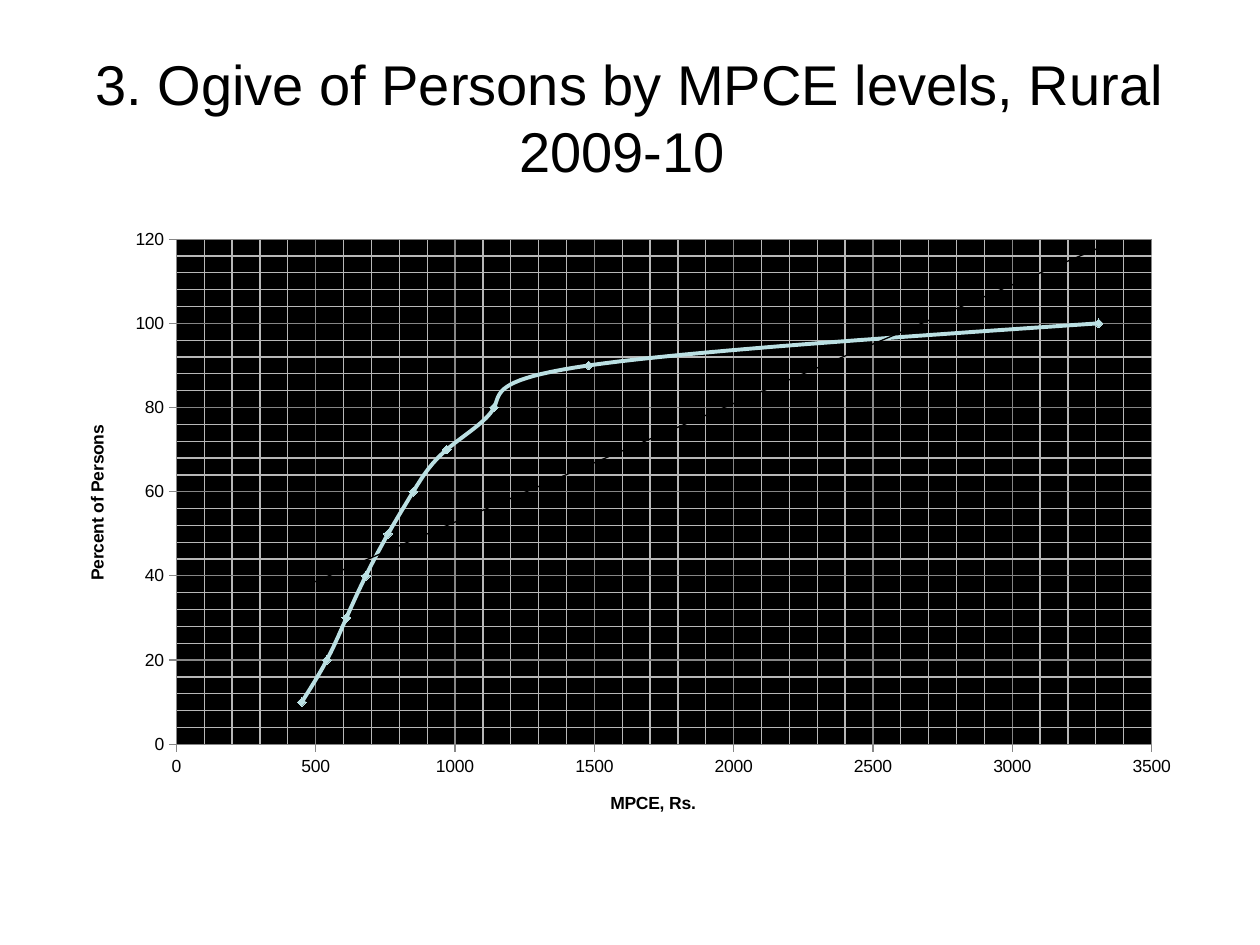
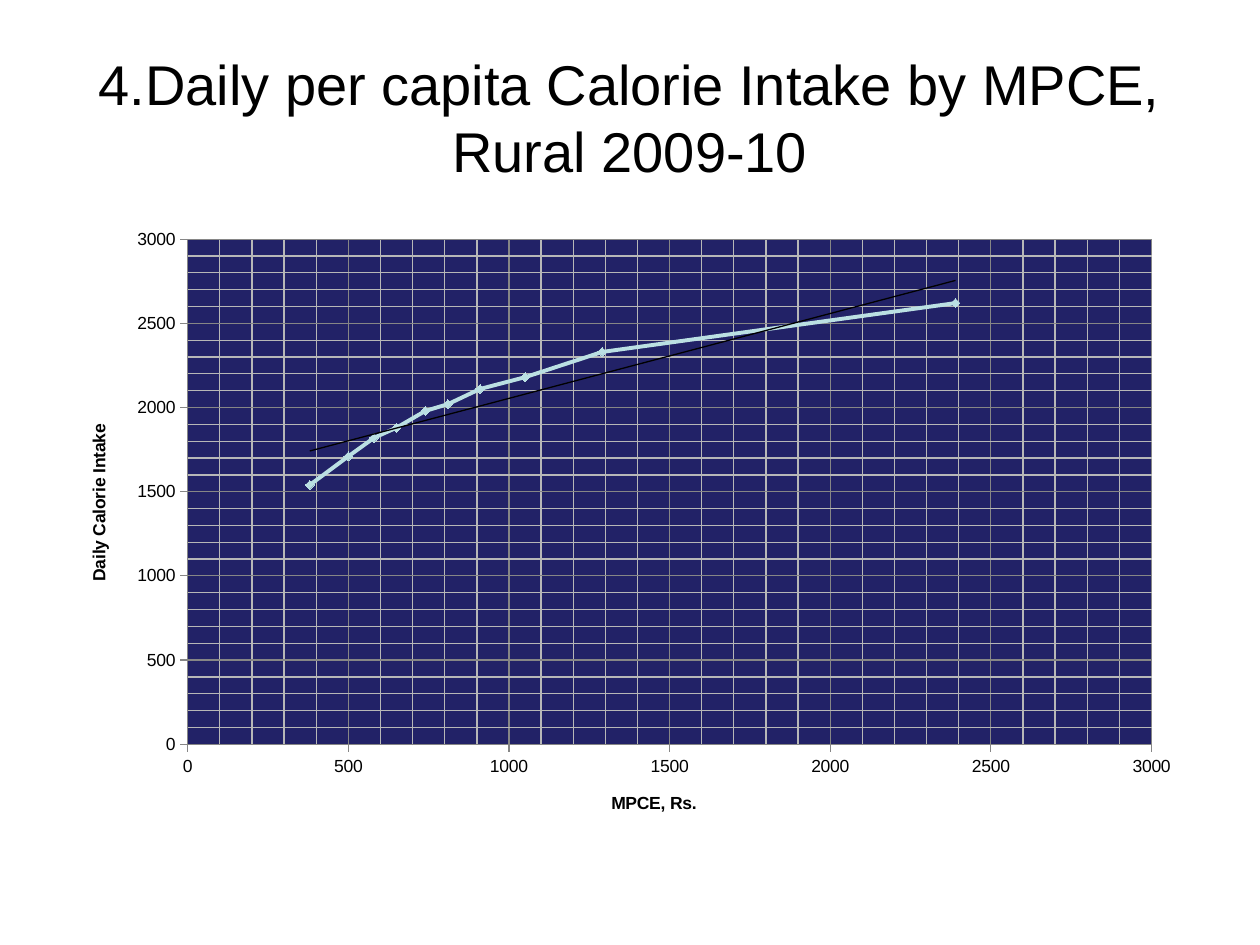
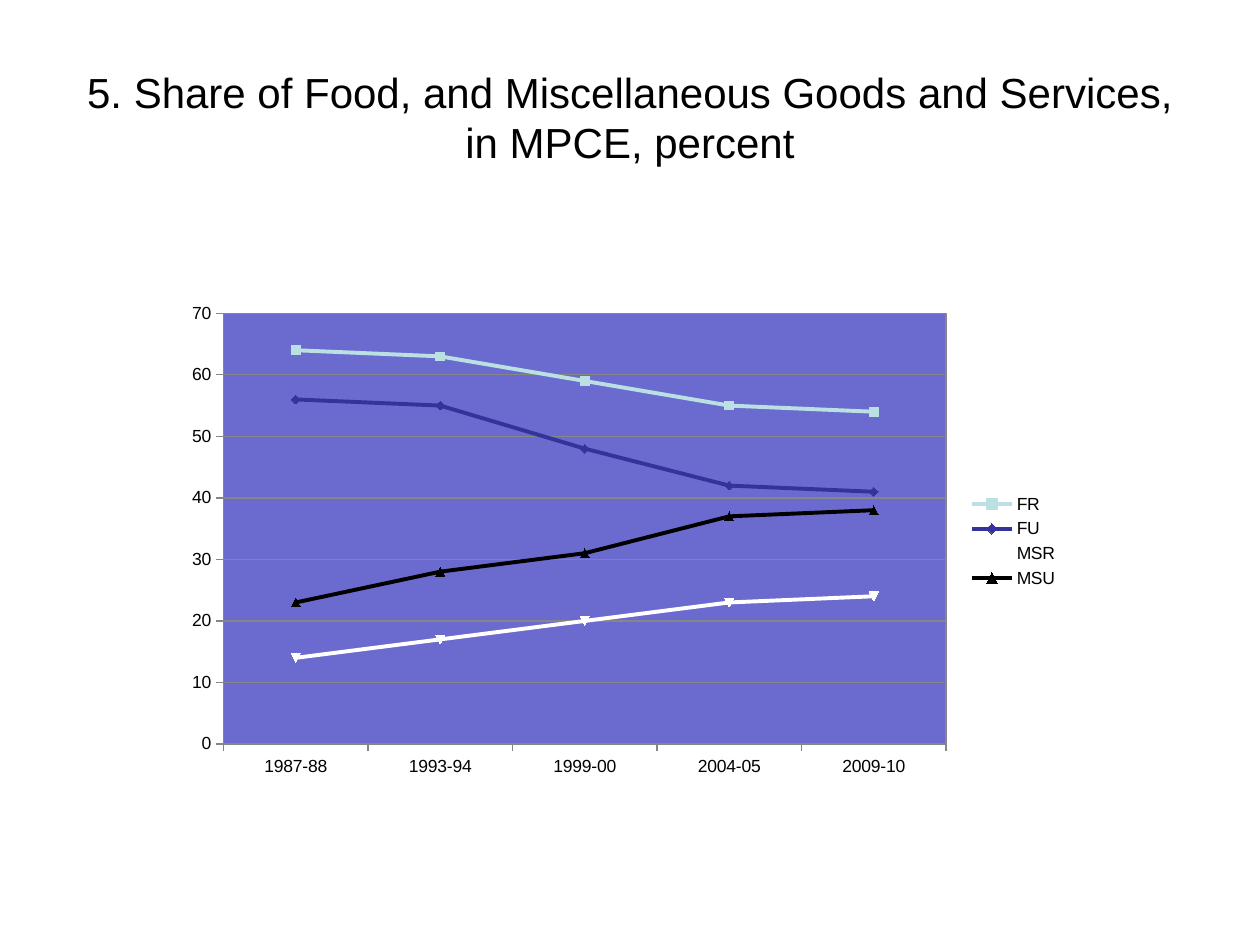
from lxml.etree import SubElement
from pptx import Presentation
from pptx.chart.data import CategoryChartData, XyChartData
from pptx.dml.color import RGBColor
from pptx.enum.chart import XL_CHART_TYPE, XL_LEGEND_POSITION, XL_MARKER_STYLE, XL_TICK_MARK
from pptx.enum.text import MSO_ANCHOR, PP_ALIGN
from pptx.oxml import parse_xml
from pptx.oxml.ns import nsdecls, qn
from pptx.util import Inches, Pt

FONT = "Arial"
BLACK = RGBColor(0x00, 0x00, 0x00)
WHITE = RGBColor(0xFF, 0xFF, 0xFF)
NAVY = RGBColor(0x22, 0x22, 0x67)
VIOLET = RGBColor(0x6B, 0x6B, 0xCF)
PALE_BLUE = RGBColor(0xBB, 0xE0, 0xE3)
INDIGO = RGBColor(0x33, 0x33, 0x99)
AXIS_GRAY = RGBColor(0x86, 0x86, 0x86)
MINOR_GRAY = RGBColor(0xB7, 0xB7, 0xB7)
THIN_LINE = '<a:ln w="9525"><a:solidFill><a:srgbClr val="{}"/></a:solidFill></a:ln>'

prs = Presentation()
prs.slide_width, prs.slide_height = Inches(10), Inches(7.5)


def add_titled_slide(title, size):
    slide = prs.slides.add_slide(prs.slide_layouts[6])
    slide.background.fill.solid()
    slide.background.fill.fore_color.rgb = WHITE
    heading = slide.shapes.add_textbox(Inches(0.5), Inches(0.3), Inches(9), Inches(1.25))
    frame = heading.text_frame
    frame.text = title
    frame.word_wrap = True
    frame.vertical_anchor = MSO_ANCHOR.MIDDLE
    paragraph = frame.paragraphs[0]
    paragraph.alignment = PP_ALIGN.CENTER
    font = paragraph.runs[0].font
    font.name, font.size, font.color.rgb = FONT, Pt(size), BLACK
    return slide


def style_chart(chart, plot_fill, plot_box, series_colors):
    """Set the common look; plot_box is x, y, w, h as shares of the chart."""
    chart.has_title = False
    chart.has_legend = False
    chart.font.name, chart.font.size, chart.font.color.rgb = FONT, Pt(10), BLACK
    chart.plots[0].vary_by_categories = False
    for axis in (chart.category_axis, chart.value_axis):
        axis.major_tick_mark = XL_TICK_MARK.OUTSIDE
        axis.minor_tick_mark = XL_TICK_MARK.NONE
        axis.format.line.color.rgb = AXIS_GRAY
    chart.value_axis.has_major_gridlines = True
    chart.value_axis.major_gridlines.format.line.color.rgb = AXIS_GRAY

    for series, color in zip(chart.plots[0].series, series_colors):
        series.format.line.color.rgb = color
        series.format.line.width = Pt(2.25)
        series.marker.format.fill.solid()
        series.marker.format.fill.fore_color.rgb = color
        series.marker.format.line.color.rgb = color

    # Plot area: fixed inner box, fill and border
    plot_area = chart.element.find(".//" + qn("c:plotArea"))
    for old_layout in plot_area.findall(qn("c:layout")):
        plot_area.remove(old_layout)
    layout = parse_xml(f"<c:layout {nsdecls('c')}><c:manualLayout/></c:layout>")
    settings = [("layoutTarget", "inner"), ("xMode", "edge"), ("yMode", "edge")]
    for tag, value in settings + list(zip("xywh", plot_box)):
        SubElement(layout[0], qn(f"c:{tag}")).set("val", str(value))
    plot_area.insert(0, layout)
    plot_area.append(parse_xml(
        f'<c:spPr {nsdecls("c", "a")}>'
        f'<a:solidFill><a:srgbClr val="{plot_fill}"/></a:solidFill>'
        f'{THIN_LINE.format(AXIS_GRAY)}</c:spPr>'))


# Slides 1 and 2: scatter curves over spending levels, with a linear trend
curves = [
    dict(title="3. Ogive of Persons by MPCE levels, Rural 2009-10 ",
         kind=XL_CHART_TYPE.XY_SCATTER_SMOOTH, smooth=True,
         y_title="Percent of Persons", fill=BLACK, box=(0.1, 0.03, 0.86, 0.81),
         x_max=3500, y_max=120, y_major=20,
         spending=[450, 540, 610, 680, 760, 850, 970, 1140, 1480, 3310],
         values=range(10, 101, 10)),
    dict(title="4.Daily per capita Calorie Intake by MPCE, Rural 2009-10",
         kind=XL_CHART_TYPE.XY_SCATTER_LINES, smooth=False,
         y_title="Daily Calorie Intake", fill=NAVY, box=(0.11, 0.03, 0.85, 0.81),
         x_max=3000, y_max=3000, y_major=500,
         spending=[380, 500, 580, 650, 740, 810, 910, 1050, 1290, 2390],
         values=[1540, 1710, 1820, 1880, 1980, 2020, 2110, 2180, 2330, 2620]),
]
for curve in curves:
    slide = add_titled_slide(curve["title"], 32)
    points = XyChartData()
    point_series = points.add_series("Series 1")
    for spending, value in zip(curve["spending"], curve["values"]):
        point_series.add_data_point(spending, value)
    chart = slide.shapes.add_chart(curve["kind"], Inches(0.5), Inches(1.75),
                                   Inches(9), Inches(4.95), points).chart
    style_chart(chart, curve["fill"], curve["box"], [PALE_BLUE])

    # Axes with major and minor grids
    axes = [(chart.category_axis, "MPCE, Rs.", curve["x_max"], 500),
            (chart.value_axis, curve["y_title"], curve["y_max"], curve["y_major"])]
    for axis, axis_title, maximum, major in axes:
        axis.minimum_scale, axis.maximum_scale = 0, maximum
        axis.major_unit, axis.minor_unit = major, major // 5
        axis.has_major_gridlines = axis.has_minor_gridlines = True
        axis.major_gridlines.format.line.color.rgb = AXIS_GRAY
        axis.axis_title.text_frame.text = axis_title
        font = axis.axis_title.text_frame.paragraphs[0].runs[0].font
        font.name, font.size, font.bold, font.color.rgb = FONT, Pt(10), True, BLACK
    for minor_grid in chart.element.findall(".//" + qn("c:minorGridlines")):
        minor_grid.append(parse_xml(
            f'<c:spPr {nsdecls("c", "a")}>{THIN_LINE.format(MINOR_GRAY)}</c:spPr>'))

    # Curve and trend line
    series = chart.plots[0].series[0]
    series.marker.style, series.marker.size = XL_MARKER_STYLE.DIAMOND, 5
    series_xml = chart.element.find(".//" + qn("c:ser"))
    series_xml.find(qn("c:smooth")).set("val", str(int(curve["smooth"])))
    series_xml.find(qn("c:xVal")).addprevious(parse_xml(
        f'<c:trendline {nsdecls("c", "a")}><c:spPr>{THIN_LINE.format(BLACK)}</c:spPr>'
        '<c:trendlineType val="linear"/><c:dispRSqr val="0"/><c:dispEq val="0"/></c:trendline>'))

# Slide 3: shares of food and of miscellaneous goods, rural and urban
slide = add_titled_slide("5. Share of Food, and Miscellaneous Goods and Services, in MPCE, percent", 24)
shares = [
    ("FR", [64, 63, 59, 55, 54], PALE_BLUE),
    ("FU", [56, 55, 48, 42, 41], INDIGO),
    ("MSR", [14, 17, 20, 23, 24], WHITE),
    ("MSU", [23, 28, 31, 37, 38], BLACK),
]
share_data = CategoryChartData()
share_data.categories = ["1987-88", "1993-94", "1999-00", "2004-05", "2009-10"]
for name, values, color in shares:
    share_data.add_series(name, values)
chart = slide.shapes.add_chart(XL_CHART_TYPE.LINE_MARKERS, Inches(1.42), Inches(2.33),
                               Inches(7.08), Inches(3.93), share_data).chart
style_chart(chart, VIOLET, (0.05, 0.04, 0.81, 0.87), [color for name, values, color in shares])
for series in chart.plots[0].series:
    series.smooth = False
chart.value_axis.minimum_scale, chart.value_axis.maximum_scale = 0, 70
chart.value_axis.major_unit = 10
chart.has_legend = True
chart.legend.position = XL_LEGEND_POSITION.RIGHT
chart.legend.include_in_layout = False
chart.legend.font.size = Pt(10)

prs.save("out.pptx")
